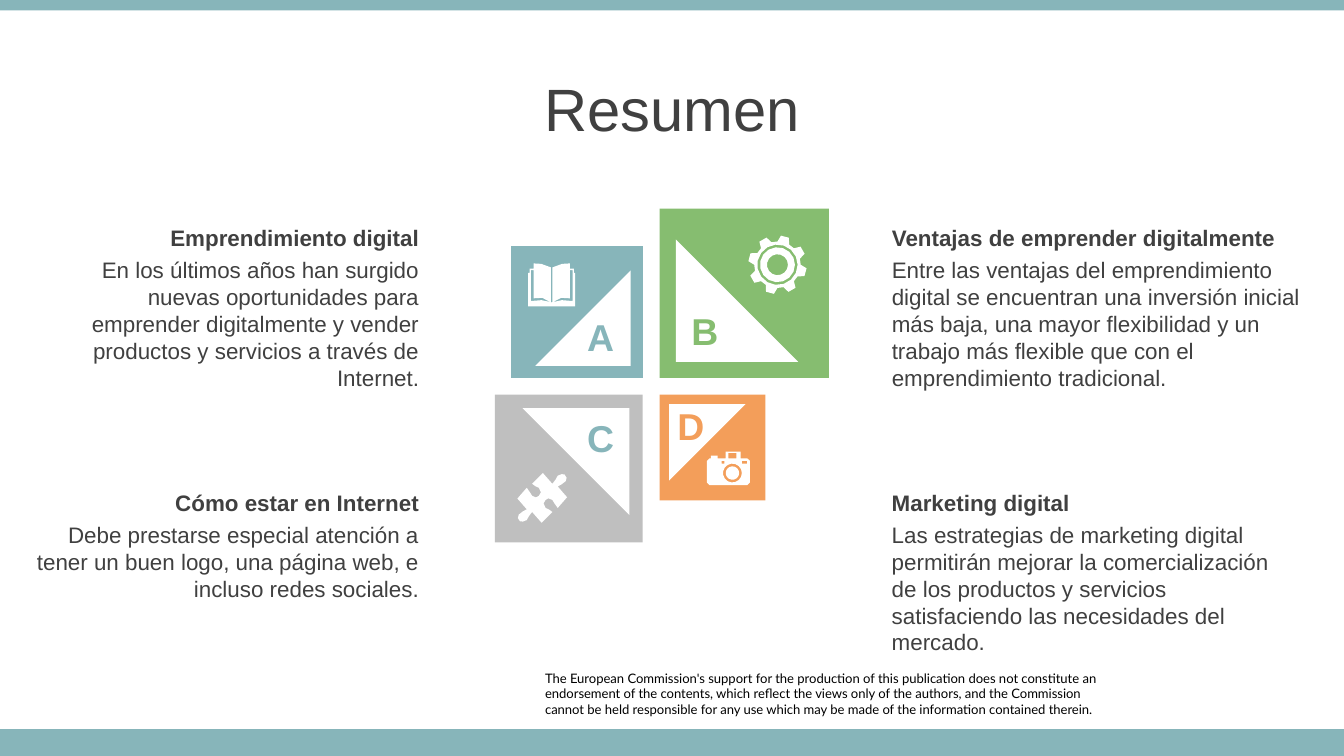
"""Build the summary slide: four lettered tiles, their texts and a disclaimer."""
from math import cos, radians, sin
from typing import NamedTuple

from pptx import Presentation
from pptx.dml.color import RGBColor
from pptx.enum.shapes import MSO_SHAPE as SHAPE
from pptx.enum.text import MSO_ANCHOR as ANCHOR, MSO_AUTO_SIZE as AUTO, PP_ALIGN as ALIGN
from pptx.util import Inches, Pt

COLS, ROWS = 100, 56.25
CELL = Inches(0.1)
COLORS = {"teal": "87B5BA", "green": "86BD70", "orange": "F39E5A", "gray": "BFBFBF",
          "white": "FFFFFF", "dark": "404040", "black": "000000"}
MARGINS = ("margin_left", "margin_top", "margin_right", "margin_bottom")
TITLE = {"size": Pt(32), "name": "Arial"}
BODY = {"size": Pt(12), "name": "Arial"}
HEADING = BODY | {"bold": True}
LETTER = {"size": Pt(20), "name": "Arial", "bold": True}
NOTE = {"size": Pt(7), "name": "Lato"}
GAP_LEFT, GAP_TOP, GAP = 47.83, 28.12, 1.25

Point = tuple[float, ...]
Contour = list[Point]


class Tile(NamedTuple):
    """A square by the central gap; col and row are 0 or 1."""
    letter: str
    col: int
    row: int
    size: float
    triangle: float
    inset: float
    turn: int
    fill: str
    ink: str
    letter_at: Point


class Topic(NamedTuple):
    """A heading with its text below."""
    heading: str
    body: str
    left: float
    top: float
    width: float
    height: float
    align: ALIGN


TILES = [
    Tile("A", 0, 0, 9.8, 7.1, 0.9, 270, "teal", "teal", (42.5, 22.9)),
    Tile("B", 1, 0, 12.6, 9.1, 1.2, 0, "green", "green", (50.25, 22.45)),
    Tile("D", 1, 1, 7.87, 5.7, 0.7, 90, "orange", "orange", (49.2, 29.5)),
    Tile("C", 0, 1, 11, 7.95, 1, 180, "gray", "teal", (42.5, 30.4)),
]
TOPICS = [
    Topic("Emprendimiento digital",
          "En los últimos años han surgido nuevas oportunidades para emprender digitalmente "
          "y vender productos y servicios a través de Internet.",
          1.58, 16.18, 30.6, 11.1, ALIGN.RIGHT),
    Topic("Cómo estar en Internet",
          "Debe prestarse especial atención a tener un buen logo, una página web, "
          "e incluso redes sociales.",
          1.58, 35.88, 30.6, 7.1, ALIGN.RIGHT),
    Topic("Ventajas de emprender digitalmente",
          "Entre las ventajas del emprendimiento digital se encuentran una inversión inicial "
          "más baja, una mayor flexibilidad y un trabajo más flexible que con el "
          "emprendimiento tradicional.",
          65.37, 16.18, 33.5, 13.1, ALIGN.LEFT),
    Topic("Marketing digital",
          "Las estrategias de marketing digital permitirán mejorar la comercialización de los "
          "productos y servicios satisfaciendo las necesidades del mercado.",
          65.37, 35.88, 32.3, 11.1, ALIGN.LEFT),
]
DISCLAIMER = [
    "The European Commission's support for the production of this publication does not "
    "constitute an endorsement of the contents, which reflect the views only of the authors, "
    "and the Commission",
    "cannot be held responsible for any use which may be made of the information "
    "contained therein.",
]
PAGE = [(41, 22.5), (41, 19.9), (40.5, 19.7, 40, 19.5, 39.7, 19.6), (39.7, 22.2),
        (40.1, 22, 40.6, 22.2, 41, 22.5)]
COVER = [(39.7, 20), (39.4, 20), (39.4, 20.3), (39.3, 20.3), (39.3, 22.8), (41.05, 22.8),
         (41.05, 22.5), (40.5, 22.4, 40.1, 22.2, 39.5, 22.4), (39.5, 20.1), (39.7, 20.1)]
HALF_PUZZLE = [(42, 35.3), (42.2, 35.4, 42.2, 35.7, 42.1, 35.8),
               (41.9, 36.1, 41.7, 36, 41.5, 36.2), (42.2, 37), (41.5, 37.8),
               (41.2, 37.6, 41.3, 37.3, 41.1, 37.2), (40.9, 37, 40.7, 37.1, 40.6, 37.2),
               (40.4, 37.3, 40.4, 37.6, 40.6, 37.8), (40.8, 38, 40.9, 37.8, 41.1, 38.1),
               (40.3, 38.9), (39.6, 38.1), (39.3, 38.4, 39.4, 38.4, 39.2, 38.7),
               (39, 38.9, 38.8, 38.8, 38.7, 38.7)]
CAMERA = [(52.6, 34.3), (52.8, 34.1), (52.9, 34.1), (52.9, 33.9), (53.4, 33.9), (53.4, 34.1),
          (54, 34.1), (54, 33.6), (55.1, 33.6), (55.1, 34.1), (55.6, 34.1), (55.8, 34.3),
          (55.8, 35.9), (55.6, 36.1), (52.8, 36.1), (52.6, 35.9)]


def rgb(name: str) -> RGBColor:
    """Look up a colour."""
    return RGBColor.from_string(COLORS[name])


def emu(values: Point) -> Point:
    """Convert grid lengths to slide units."""
    return tuple(round(v * CELL) for v in values)


def flatten(contour: Contour, steps: int = 2) -> Contour:
    """Turn the six-number Bézier entries of a contour into points."""
    points: Contour = []
    for entry in contour:
        if len(entry) == 2:
            points.append(entry)
            continue
        x0, y0 = points[-1]
        x1, y1, x2, y2, x3, y3 = entry
        for i in range(1, steps + 1):
            t = i / steps
            a, b, c, d = (1 - t) ** 3, 3 * t * (1 - t) ** 2, 3 * t * t * (1 - t), t ** 3
            points.append((a * x0 + b * x1 + c * x2 + d * x3,
                           a * y0 + b * y1 + c * y2 + d * y3))
    return points


def polar(cx: float, cy: float, radius: float, angle: float) -> Point:
    """Give the point at an angle in degrees around a centre."""
    return cx + radius * cos(radians(angle)), cy + radius * sin(radians(angle))


def circle(cx: float, cy: float, radius: float) -> Contour:
    """Outline a circle."""
    return [polar(cx, cy, radius, a) for a in range(0, 360, 24)]


def box(x: float, y: float, w: float, h: float) -> Contour:
    """Outline a rectangle."""
    return [(x, y), (x + w, y), (x + w, y + h), (x, y + h)]


def icons() -> list[list[Contour]]:
    """Outline the book, puzzle piece, gear and camera."""
    halves = [flatten(PAGE), flatten(COVER)]
    book = halves + [[(82.1 - x, y) for x, y in half] for half in halves]
    half = flatten(HALF_PUZZLE)[:-1]
    puzzle = [half + [(80.7 - x, 74.1 - y) for x, y in half]]
    hub = (57.85, 19.7)
    teeth = [polar(*hub, r, tooth + a) for tooth in range(-75, 285, 45)
             for r, a in ((1.73, -15), (2.18, -8), (2.18, 8), (1.73, 15))]
    gear = [teeth] + [circle(*hub, r) for r in (1.5, 1.3, 0.78)]
    camera = [CAMERA, box(53.7, 34.3, 0.2, 0.2), box(55.2, 34.3, 0.4, 0.2),
              box(54.2, 33.7, 0.6, 0.4), circle(54.5, 35.2, 0.7), circle(54.5, 35.2, 0.5)]
    return [book, puzzle, gear, camera]


def paint(sp, fill: str) -> None:
    """Give a shape a plain fill with no line or shadow."""
    sp.shadow.inherit = False
    sp.fill.solid()
    sp.fill.fore_color.rgb = rgb(fill)
    sp.line.fill.background()


def add_shape(slide, kind: SHAPE, area: Point, fill: str, turn: int = 0) -> None:
    """Draw a preset shape on the grid."""
    sp = slide.shapes.add_shape(kind, *emu(area))
    sp.rotation = turn
    paint(sp, fill)


def add_icon(slide, contours: list[Contour]) -> None:
    """Draw a white icon from its contours."""
    first, *others = [[emu(point) for point in contour] for contour in contours]
    fb = slide.shapes.build_freeform(*first[0])
    fb.add_line_segments(first[1:], close=True)
    for contour in others:
        fb.move_to(*contour[0])
        fb.add_line_segments(contour[1:], close=True)
    paint(fb.convert_to_shape(), "white")


def write(tf, lines: list[str], font: dict, color: str, align: ALIGN) -> None:
    """Fill a text frame with formatted paragraphs."""
    tf.word_wrap = True
    for i, line in enumerate(lines):
        p = tf.add_paragraph() if i else tf.paragraphs[0]
        p.alignment = align
        r = p.add_run()
        r.text = line
        r.font.color.rgb = rgb(color)
        for key, value in font.items():
            setattr(r.font, key, value)


def add_text(slide, area: Point, lines: list[str], font: dict, color: str = "dark",
             align: ALIGN = ALIGN.LEFT):
    """Add a text box on the grid and return its frame."""
    tf = slide.shapes.add_textbox(*emu(area)).text_frame
    write(tf, lines, font, color, align)
    return tf


def add_tile(slide, tile: Tile) -> None:
    """Draw a tile with its white triangle, both growing away from the central gap."""
    x, y = GAP_LEFT + tile.col * GAP, GAP_TOP + tile.row * GAP
    for kind, size, inset, fill, turn in (
            (SHAPE.RECTANGLE, tile.size, 0, tile.fill, 0),
            (SHAPE.RIGHT_TRIANGLE, tile.triangle, tile.inset, "white", tile.turn)):
        left = x + inset if tile.col else x - inset - size
        top = y + inset if tile.row else y - inset - size
        add_shape(slide, kind, (left, top, size, size), fill, turn)
    add_text(slide, (*tile.letter_at, 4.4, 4.4), [tile.letter], LETTER, tile.ink, ALIGN.CENTER)


def main() -> None:
    """Build and save the slide."""
    prs = Presentation()
    prs.slide_width, prs.slide_height = emu((COLS, ROWS))
    slide = prs.slides.add_slide(prs.slide_layouts[5])

    title = slide.shapes.title
    for key, value in {"left": 0, "top": 4.85, "width": COLS, "height": 6.3}.items():
        setattr(title, key, round(value * CELL))
    title.text_frame.auto_size = AUTO.NONE
    title.text_frame.vertical_anchor = ANCHOR.MIDDLE
    write(title.text_frame, ["Resumen"], TITLE, "dark", ALIGN.CENTER)

    for top, height in ((0, 0.77), (54.25, 2)):
        add_shape(slide, SHAPE.RECTANGLE, (0, top, COLS, height), "teal")
    for tile in TILES:
        add_tile(slide, tile)
    for icon in icons():
        add_icon(slide, icon)
    for t in TOPICS:
        add_text(slide, (t.left, t.top + 2.4, t.width, t.height), [t.body], BODY, align=t.align)
        add_text(slide, (t.left, t.top, t.width, 3), [t.heading], HEADING, align=t.align)
    note = add_text(slide, (40.56, 49.87, 41.7, 3.5), DISCLAIMER, NOTE, "black")
    for margin in MARGINS:
        setattr(note, margin, 0)
    prs.save("out.pptx")


if __name__ == "__main__":
    main()
